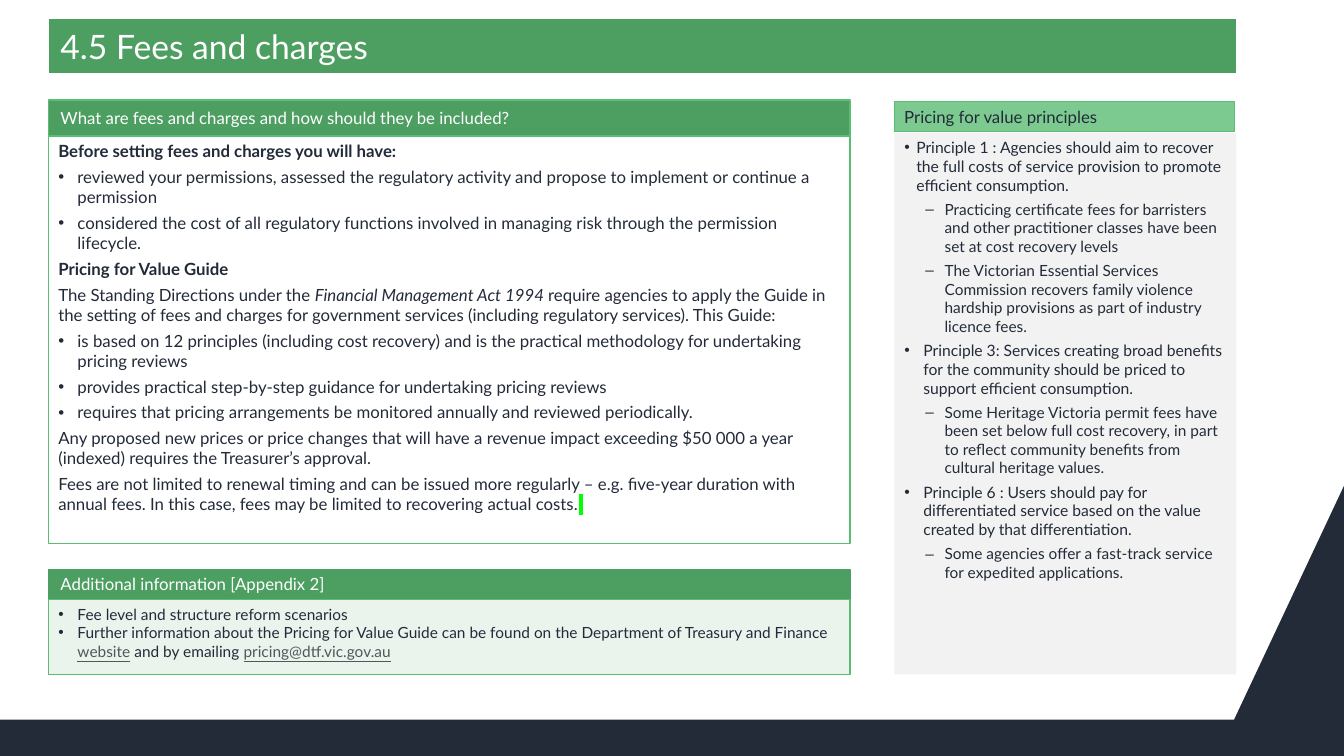
from lxml.etree import SubElement
from pptx import Presentation
from pptx.dml.color import RGBColor
from pptx.enum.shapes import MSO_SHAPE as Preset
from pptx.enum.text import MSO_ANCHOR as Anchor, PP_ALIGN as Align
from pptx.oxml import parse_xml
from pptx.oxml.ns import nsdecls, qn
from pptx.util import Inches, Pt

FONT = "Lato"
NAVY, WHITE, LINK = "232B39", "FFFFFF", "53565A"
GREEN, BORDER, MINT = "4C9E61", "5BBD74", "7CCA90"
PALE_GREEN, PALE_GREY = "EAF4EC", "F2F2F2"
LEFT, MAIN_WIDTH, SIDE_LEFT = 0.48, 7.95, 8.87
HEADING_INSETS = (0.12, 0, 0.2, 0)

BULLET = dict(bullet="•", indent=0.19)
DASH = dict(bullet="–", indent=0.4, level=1, size=11)
SPACED = dict(before=2, after=2)

GUIDANCE = [
    ("Before setting fees and charges you will have:", dict(bold=True)),
    ("reviewed your permissions, assessed the regulatory activity and propose to "
     "implement or continue a permission", BULLET),
    ("considered the cost of all regulatory functions involved in managing risk "
     "through the permission lifecycle.", BULLET),
    ("Pricing for Value Guide", dict(bold=True)),
    ([("The Standing Directions under the ", {}),
      ("Financial Management Act 1994 ", dict(italic=True)),
      ("require agencies to apply the Guide in the setting of fees and charges for "
       "government services (including regulatory services). This Guide:", {})], {}),
    ("is based on 12 principles (including cost recovery) and is the practical "
     "methodology for undertaking pricing reviews", BULLET),
    ("provides practical step-by-step guidance for undertaking pricing reviews", BULLET),
    ("requires that pricing arrangements be monitored annually and reviewed "
     "periodically.", BULLET),
    ("Any proposed new prices or price changes that will have a revenue impact "
     "exceeding $50 000 a year (indexed) requires the Treasurer’s approval.", {}),
    ([("Fees are not limited to renewal timing and can be issued more regularly – e.g. "
       "five-year duration with annual fees. In this case, fees may be limited to "
       "recovering actual costs.", {}),
      (" ", dict(highlight="00FF00"))], {}),
]

PRINCIPLES = [
    ("Principle 1 : Agencies should aim to recover the full costs of service provision "
     "to promote efficient consumption.", BULLET | dict(indent=0.12, hanging=0.12)),
    ("Practicing certificate fees for barristers and other practitioner classes have "
     "been set at cost recovery levels", DASH),
    ("The Victorian Essential Services Commission recovers family violence hardship "
     "provisions as part of industry licence fees.", DASH),
    ("Principle 3: Services creating broad benefits for the community should be priced "
     "to support efficient consumption.", BULLET),
    ("Some Heritage Victoria permit fees have been set below full cost recovery, in "
     "part to reflect community benefits from cultural heritage values.", DASH),
    ("Principle 6 : Users should pay for differentiated service based on the value "
     "created by that differentiation.", BULLET),
    ("Some agencies offer a fast-track service for expedited applications.", DASH),
]

FURTHER_INFORMATION = [
    ("Fee level and structure reform scenarios", BULLET),
    ([("Further information about the Pricing for Value Guide can be found on the "
       "Department of Treasury and Finance ", {}),
      ("website", dict(color=LINK, underline=True)),
      (" and by emailing ", {}),
      ("pricing@dtf.vic.gov.au", dict(color=LINK, underline=True))], BULLET),
]


def rgb(color):
    return RGBColor.from_string(color)


def add_run(paragraph, text, size=12, color=NAVY, bold=False, italic=False,
            underline=False, highlight=None):
    run = paragraph.add_run()
    run.text = text
    font = run.font
    font.name, font.size = FONT, Pt(size)
    font.bold, font.italic, font.underline = bold, italic, underline
    font.color.rgb = rgb(color)
    if highlight:
        text_fill = run._r.get_or_add_rPr().find(qn("a:solidFill"))
        text_fill.addnext(parse_xml(
            f'<a:highlight {nsdecls("a")}><a:srgbClr val="{highlight}"/></a:highlight>'))


def write_paragraph(paragraph, content, bullet=None, indent=0, hanging=0.19, level=0,
                    before=0, after=0, line_spacing=1, **run_format):
    """Fill a paragraph from one string or from (text, format) runs."""
    paragraph.alignment = Align.LEFT
    paragraph.level = level
    paragraph.space_before, paragraph.space_after = Pt(before), Pt(after)
    paragraph.line_spacing = line_spacing
    if bullet:
        properties = paragraph._p.get_or_add_pPr()
        properties.set("marL", str(Inches(indent)))
        properties.set("indent", str(-Inches(hanging)))
        SubElement(properties, qn("a:buFont"), typeface="Arial")
        SubElement(properties, qn("a:buChar"), char=bullet)
    runs = [(content, {})] if isinstance(content, str) else content
    for text, own_format in runs:
        add_run(paragraph, text, **(run_format | own_format))


def paint(shape, fill, line=None, line_width=1):
    shape.shadow.inherit = False
    shape.fill.solid()
    shape.fill.fore_color.rgb = rgb(fill)
    if line:
        shape.line.color.rgb = rgb(line)
        shape.line.width = Pt(line_width)
    else:
        shape.line.fill.background()


def add_panel(slide, box, paragraphs, fill, line=None, line_width=1,
              insets=(0.1, 0.05, 0.1, 0.05), anchor=Anchor.TOP, **text_format):
    panel = slide.shapes.add_shape(Preset.RECTANGLE, *map(Inches, box))
    paint(panel, fill, line, line_width)
    frame = panel.text_frame
    frame.word_wrap = True
    frame.vertical_anchor = anchor
    (frame.margin_left, frame.margin_top,
     frame.margin_right, frame.margin_bottom) = map(Inches, insets)
    for number, (content, own_format) in enumerate(paragraphs):
        paragraph = frame.add_paragraph() if number else frame.paragraphs[0]
        write_paragraph(paragraph, content, **(text_format | own_format))


def add_heading(slide, box, text, fill=GREEN, line=GREEN, color=WHITE, **panel_format):
    add_panel(slide, box, [(text, {})], fill, line, anchor=Anchor.MIDDLE,
              color=color, **panel_format)


def add_footer_wedge(slide):
    outline = [(0, 7.14), (0, 7.5), (13.33, 7.5), (13.33, 4.82), (12.24, 7.14)]
    start, *corners = [(Inches(x), Inches(y)) for x, y in outline]
    builder = slide.shapes.build_freeform(*start)
    builder.add_line_segments(corners, close=True)
    paint(builder.convert_to_shape(), NAVY)


def main():
    presentation = Presentation()
    presentation.slide_width, presentation.slide_height = Inches(13.33), Inches(7.5)
    slide = presentation.slides.add_slide(presentation.slide_layouts[6])

    add_footer_wedge(slide)
    add_panel(slide, (SIDE_LEFT, 1.32, 3.39, 5.37), PRINCIPLES, PALE_GREY,
              size=11.2, **SPACED)
    add_heading(slide, (LEFT, 5.65, MAIN_WIDTH, 0.3), "Additional information [Appendix 2]",
                insets=HEADING_INSETS, line_spacing=0.9)
    add_panel(slide, (LEFT, 5.95, MAIN_WIDTH, 0.74), FURTHER_INFORMATION, PALE_GREEN,
              BORDER, size=11)
    add_heading(slide, (LEFT, 0.18, 11.79, 0.55), "4.5 Fees and charges", line=WHITE,
                insets=(0.12, 0.01, 0.21, 0.01), size=24)
    add_heading(slide, (LEFT, 0.99, MAIN_WIDTH, 0.38),
                "What are fees and charges and how should they be included?", line=BORDER,
                insets=HEADING_INSETS, line_spacing=0.9)
    add_panel(slide, (LEFT, 1.35, MAIN_WIDTH, 4.04), GUIDANCE, WHITE, BORDER, **SPACED)
    add_heading(slide, (SIDE_LEFT, 1.01, 3.37, 0.3), "Pricing for value principles",
                fill=MINT, line=BORDER, color=NAVY, line_width=0.75)

    presentation.save("out.pptx")


if __name__ == "__main__":
    main()
